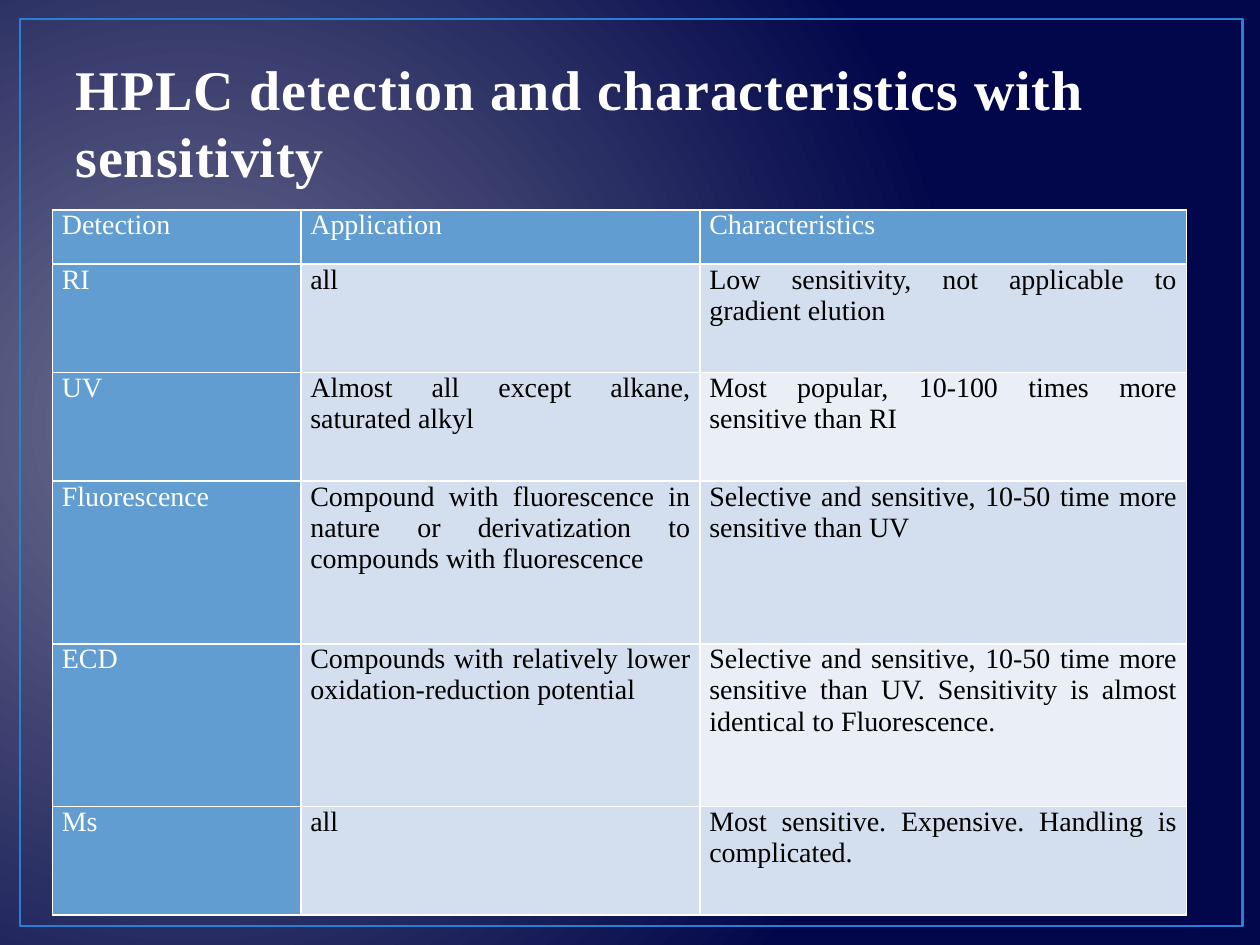
from lxml.etree import SubElement
from pptx import Presentation
from pptx.dml.color import RGBColor
from pptx.enum.shapes import MSO_SHAPE as SHAPE
from pptx.enum.text import MSO_ANCHOR as ANCHOR, PP_ALIGN as ALIGN
from pptx.oxml import parse_xml
from pptx.oxml.ns import nsdecls, qn
from pptx.util import Pt

TITLE = "HPLC detection and characteristics with sensitivity"
ROWS = [
    ("Detection", "Application", "Characteristics"),
    ("RI", "all", "Low sensitivity, not applicable to gradient elution"),
    ("UV", "Almost all except alkane, saturated alkyl",
     "Most popular, 10-100 times more sensitive than RI"),
    ("Fluorescence",
     "Compound with fluorescence in nature or derivatization to compounds with fluorescence",
     "Selective and sensitive, 10-50 time more sensitive than UV"),
    ("ECD", "Compounds with relatively lower oxidation-reduction potential",
     "Selective and sensitive, 10-50 time more sensitive than UV. "
     "Sensitivity is almost identical to Fluorescence."),
    ("Ms", "all", "Most sensitive. Expensive. Handling is complicated."),
]
COL_WIDTHS = (142, 228, 278)
ROW_UNITS = (1, 2, 2, 3, 3, 2)
ROW_UNIT = 31
FONT = "Times New Roman"
WHITE, BLACK, BLUE = "FFFFFF", "000000", "629DD1"
BAND, PALE = "D3DFEE", "EAEFF7"


def rgb(value):
    return RGBColor.from_string(value)


def line_xml(tag, color, width):
    return parse_xml(
        f'<a:{tag} {nsdecls("a")} w="{Pt(width)}"><a:solidFill>'
        f'<a:srgbClr val="{color}"/></a:solidFill></a:{tag}>')


def style_run(r, size, color, bold=False):
    r.font.name = FONT
    r.font.size = Pt(size)
    r.font.bold = bold
    r.font.color.rgb = rgb(color)


def set_background(slide):
    fill = slide.background.fill
    fill.gradient()
    for stop, color in zip(fill.gradient_stops, ("6E708E", "01074A")):
        stop.color.rgb = rgb(color)
    fill.gradient_stops[0].position = 0
    fill.gradient_stops[1].position = 1
    grad = next(slide.element.iter(qn("a:gradFill")))
    grad.remove(grad.find(qn("a:lin")))
    circle = SubElement(grad, qn("a:path"), path="circle")
    SubElement(circle, qn("a:fillToRect"), l="15000", t="50000", r="85000", b="60000")


def add_frame(slide):
    sp = slide.shapes.add_shape(SHAPE.RECTANGLE, Pt(11.5), Pt(10.8), Pt(698.4), Pt(518.4))
    sp.shadow.inherit = False
    sp.fill.background()
    sp.line.color.rgb = rgb("297FD5")
    sp.line.width = Pt(1.5)


def set_title(slide):
    sp = slide.shapes.title
    sp.left, sp.top, sp.width, sp.height = Pt(36), Pt(21.6), Pt(648), Pt(90)
    tf = sp.text_frame
    tf.text = TITLE
    tf.word_wrap = True
    tf.vertical_anchor = ANCHOR.BOTTOM
    p = tf.paragraphs[0]
    p.alignment = ALIGN.LEFT
    r = p.runs[0]
    style_run(r, 32, "FEFEFE", bold=True)
    props = r.font._element
    props.set("spc", "50")
    props.insert(0, line_xml("ln", "234F77", 1.05))


def cell_fill(row, col):
    if row == 0 or col == 0:
        return BLUE
    return PALE if col == 2 and row % 2 == 0 else BAND


def format_cell(cell, text, row, col):
    cell.text = text
    cell.margin_left = cell.margin_right = Pt(5.4)
    cell.margin_top = cell.margin_bottom = 0
    fill = cell_fill(row, col)
    cell.fill.solid()
    cell.fill.fore_color.rgb = rgb(fill)
    p = cell.text_frame.paragraphs[0]
    p.alignment = ALIGN.JUSTIFY
    style_run(p.runs[0], 16, WHITE if fill == BLUE else BLACK)
    props = cell._tc.get_or_add_tcPr()
    for i, tag in enumerate(("lnL", "lnR", "lnT", "lnB")):
        props.insert(i, line_xml(tag, WHITE, 1))


def add_detector_table(slide):
    table = slide.shapes.add_table(
        len(ROWS), len(COL_WIDTHS), Pt(30), Pt(120),
        Pt(sum(COL_WIDTHS)), Pt(sum(ROW_UNITS) * ROW_UNIT)).table
    for column, width in zip(table.columns, COL_WIDTHS):
        column.width = Pt(width)
    for i, (texts, units) in enumerate(zip(ROWS, ROW_UNITS)):
        table.rows[i].height = Pt(units * ROW_UNIT)
        for j, text in enumerate(texts):
            format_cell(table.cell(i, j), text, i, j)


def main():
    prs = Presentation()
    prs.slide_width, prs.slide_height = Pt(720), Pt(540)
    slide = prs.slides.add_slide(prs.slide_layouts[5])
    set_background(slide)
    add_frame(slide)
    set_title(slide)
    add_detector_table(slide)
    prs.save("out.pptx")


if __name__ == "__main__":
    main()
